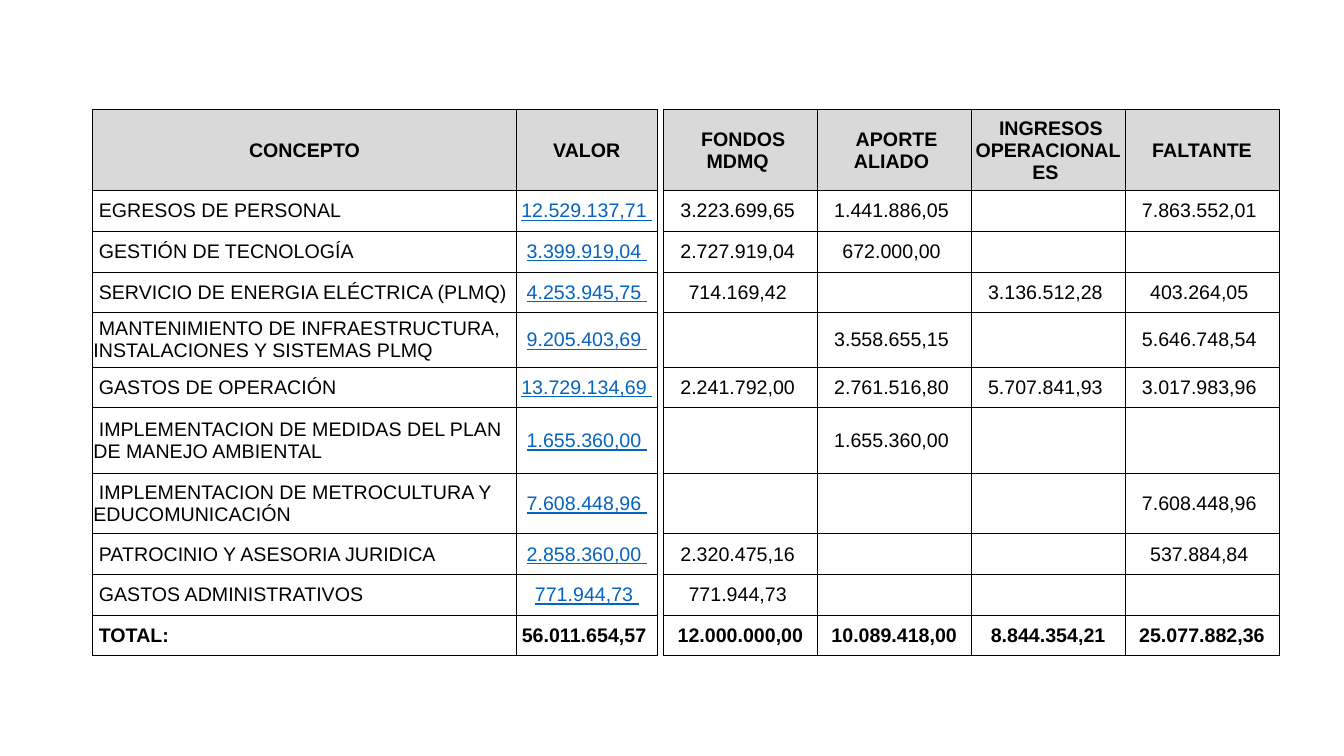
from pptx import Presentation
from pptx import util as u
from pptx.dml.color import RGBColor
from pptx.enum import text
from pptx.oxml import parse_xml
from pptx.oxml.ns import nsdecls

HEADERS = ["CONCEPTO", "VALOR", "FONDOS MDMQ", "APORTE ALIADO",
           "INGRESOS OPERACIONALES", "FALTANTE"]
BUDGET = [
    ("EGRESOS DE PERSONAL", "12.529.137,71", "3.223.699,65", "1.441.886,05", "", "7.863.552,01"),
    ("GESTIÓN DE TECNOLOGÍA", "3.399.919,04", "2.727.919,04", "672.000,00", "", ""),
    ("SERVICIO DE ENERGIA ELÉCTRICA (PLMQ)", "4.253.945,75", "714.169,42", "",
     "3.136.512,28", "403.264,05"),
    ("MANTENIMIENTO DE INFRAESTRUCTURA, INSTALACIONES Y SISTEMAS PLMQ", "9.205.403,69",
     "", "3.558.655,15", "", "5.646.748,54"),
    ("GASTOS DE OPERACIÓN", "13.729.134,69", "2.241.792,00", "2.761.516,80",
     "5.707.841,93", "3.017.983,96"),
    ("IMPLEMENTACION DE MEDIDAS DEL PLAN DE MANEJO AMBIENTAL", "1.655.360,00",
     "", "1.655.360,00", "", ""),
    ("IMPLEMENTACION DE METROCULTURA Y EDUCOMUNICACIÓN", "7.608.448,96",
     "", "", "", "7.608.448,96"),
    ("PATROCINIO Y ASESORIA JURIDICA", "2.858.360,00", "2.320.475,16", "", "", "537.884,84"),
    ("GASTOS ADMINISTRATIVOS", "771.944,73", "771.944,73", "", "", ""),
]
TOTALS = ("TOTAL:", "56.011.654,57", "12.000.000,00", "10.089.418,00",
          "8.844.354,21", "25.077.882,36")
LEFT, TOP = 66.1, 78.2
GAP_COL = 2
COL_WIDTHS = [302.9, 100.4, 4.6] + [109.9] * 4
ROW = 29.1
ROW_HEIGHTS = [57.8, ROW, ROW, ROW, 38.8, ROW, 47.1, 42.9, ROW, ROW, ROW]
BLACK, LINK, GREY = "000000", "0563C1", "D9D9D9"


def rgb(value):
    """Turn a hex string into a colour."""
    return RGBColor.from_string(value)


def set_borders(cell, sides):
    """Draw thin black lines on the named sides and none on the others."""
    for side in "LRTB":
        fill = (f'<a:solidFill><a:srgbClr val="{BLACK}"/></a:solidFill>'
                if side in sides else "<a:noFill/>")
        cell._tc.get_or_add_tcPr().append(parse_xml(
            f'<a:ln{side} {nsdecls("a")} w="{u.Pt(0.5)}">{fill}</a:ln{side}>'))


def write(cell, content, color=BLACK, bold=False, underline=False, centered=True):
    """Put formatted text in a cell."""
    cell.vertical_anchor = text.MSO_ANCHOR.MIDDLE
    cell.margin_left = cell.margin_right = cell.margin_top = u.Pt(0.6)
    cell.margin_bottom = u.Pt(0)
    p = cell.text_frame.paragraphs[0]
    p.alignment = text.PP_ALIGN.CENTER if centered else text.PP_ALIGN.LEFT
    if not content:
        p.font.size = u.Pt(14)
        return
    r = p.add_run()
    r.text = content
    r.font.name, r.font.size = "Arial", u.Pt(14)
    r.font.bold, r.font.underline = bold, underline
    r.font.color.rgb = rgb(color)


def main():
    """Build the budget slide."""
    prs = Presentation()
    prs.slide_width, prs.slide_height = u.Pt(960), u.Pt(540)
    s = prs.slides.add_slide(prs.slide_layouts[6])
    rows = [HEADERS, *BUDGET, TOTALS]
    table = s.shapes.add_table(len(rows), len(COL_WIDTHS), u.Pt(LEFT), u.Pt(TOP),
                               u.Pt(sum(COL_WIDTHS)), u.Pt(sum(ROW_HEIGHTS))).table
    table.first_row = table.horz_banding = False
    for column, width in zip(table.columns, COL_WIDTHS):
        column.width = u.Pt(width)
    for row, height in zip(table.rows, ROW_HEIGHTS):
        row.height = u.Pt(height)

    for i, values in enumerate(rows):
        header, total = i == 0, i == len(rows) - 1
        for j, value in enumerate([*values[:GAP_COL], "", *values[GAP_COL:]]):
            cell = table.cell(i, j)
            set_borders(cell, "LR" if j == GAP_COL else "LRTB")
            if header and j != GAP_COL:
                cell.fill.solid()
                cell.fill.fore_color.rgb = rgb(GREY)
            else:
                cell.fill.background()
            before = " " if value and (header or j == 0) else ""
            after = " " if value and (header or j == 1 or j > 1 and not total) else ""
            link = j == 1 and not header and not total
            write(cell, before + value + after, color=LINK if link else BLACK,
                  bold=header or total, underline=link, centered=header or j > 0)
    prs.save("out.pptx")


if __name__ == "__main__":
    main()
